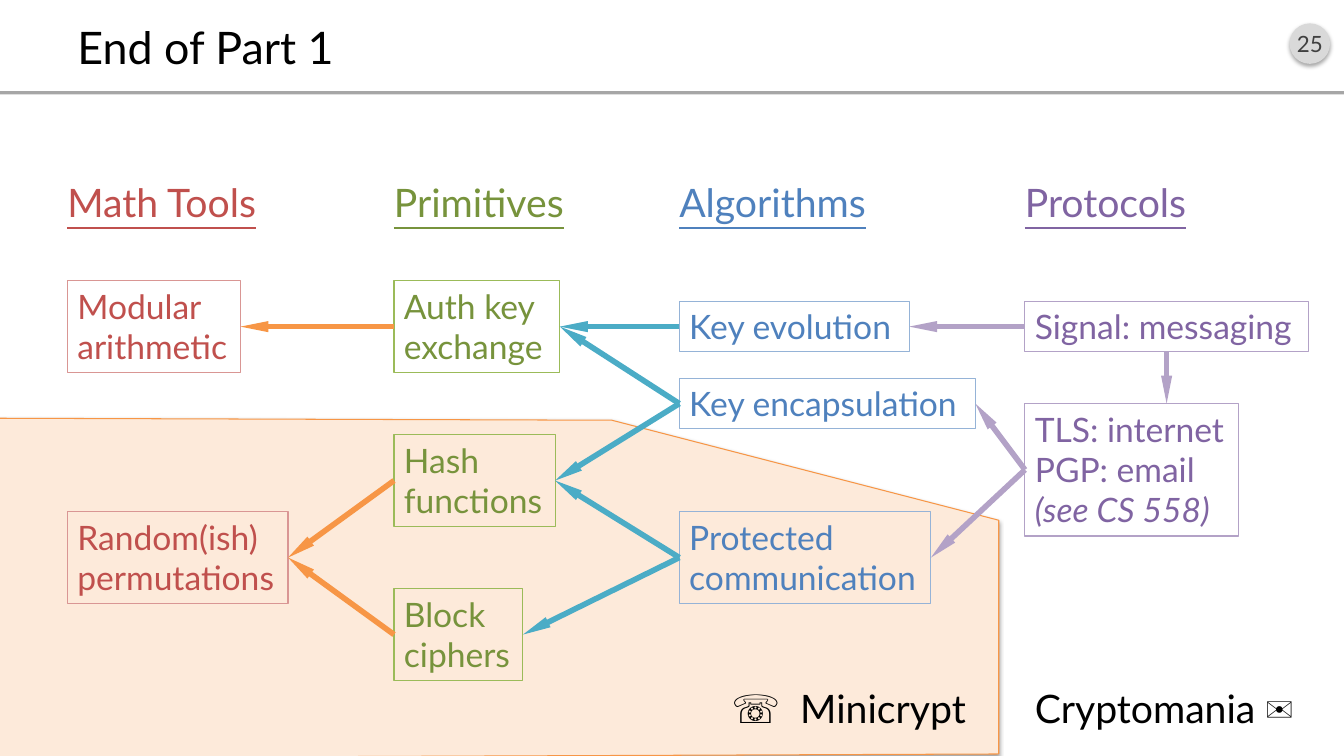
"""Build the closing slide of part 1: a map from protocols down to math tools."""
import pptx
import pptx.dml.color
import pptx.enum.shapes
import pptx.enum.text
import pptx.oxml
import pptx.util

Cm = pptx.util.Cm
Pt = pptx.util.Pt
RGB = pptx.dml.color.RGBColor.from_string
SHAPE = pptx.enum.shapes.MSO_SHAPE
ALIGN = pptx.enum.text.PP_ALIGN
MIDDLE = pptx.enum.text.MSO_ANCHOR.MIDDLE
FIT = pptx.enum.text.MSO_AUTO_SIZE.SHAPE_TO_FIT_TEXT
NAMESPACE = 'xmlns:a="http://schemas.openxmlformats.org/drawingml/2006/main"'
SHADOW = (
    f'<a:effectLst {NAMESPACE}><a:outerShdw blurRad="39370" dist="22860" dir="5400000" '
    'rotWithShape="0"><a:srgbClr val="000000"><a:alpha val="35000"/></a:srgbClr>'
    '</a:outerShdw></a:effectLst>'
)
COLOURS = {
    "black": "000000", "number": "404040", "badge": "D9D9D9", "rule": "A6A6A6",
    "red": "C0504D", "green": "77933C", "blue": "4F81BD", "purple": "8064A2",
    "red edge": "D99694", "green edge": "9BBB59", "blue edge": "95B3D7",
    "purple edge": "B3A2C7", "orange": "F79646", "teal": "4BACC6", "peach": "FDEADA",
}


def write(box, text, size, colour, align=ALIGN.LEFT):
    """Fill a box with unwrapped text in one style."""
    box.text_frame.word_wrap = False
    box.text_frame.text = text
    for para in box.text_frame.paragraphs:
        para.alignment = align
        for span in para.runs:
            span.font.name = "Lato"
            span.font.size = Pt(size)
            span.font.color.rgb = RGB(COLOURS[colour])


def add_effects(shape, xml):
    """Replace the effects of a shape."""
    shape._element.spPr.remove_all("a:effectLst")
    shape._element.spPr.append(pptx.oxml.parse_xml(xml))


deck = pptx.Presentation()
deck.slide_width, deck.slide_height = Cm(33.87), Cm(19.05)
page = deck.slides.add_slide(deck.slide_layouts[6])
shapes = page.shapes

badge = shapes.add_shape(SHAPE.OVAL, Cm(32.5), Cm(0.59), Cm(1.02), Cm(1.02))
badge.fill.solid()
badge.fill.fore_color.rgb = RGB(COLOURS["badge"])
badge.line.fill.background()
add_effects(badge, SHADOW)
badge.text_frame.margin_left = badge.text_frame.margin_right = 0
write(badge, "25", 16, "number", ALIGN.CENTER)

rule = shapes.add_shape(SHAPE.RECTANGLE, 0, Cm(2.3), deck.slide_width, Cm(0.08))
rule.fill.solid()
rule.fill.fore_color.rgb = RGB(COLOURS["rule"])
rule.line.fill.background()
rule.shadow.inherit = False

title = shapes.add_textbox(Cm(1.7), Cm(0.41), Cm(30.48), Cm(1.52))
write(title, "End of Part 1", 32, "black")
title.text_frame.word_wrap = True
title.text_frame.vertical_anchor = MIDDLE

outline = [(-0.05, 19.1), (-0.03, 10.54), (15.42, 10.59), (25.17, 13.11), (25.17, 19)]
corners = [(Cm(x), Cm(y)) for x, y in outline]
builder = shapes.build_freeform(*corners[0], scale=1.0)
builder.add_line_segments(corners[1:], close=True)
minicrypt = builder.convert_to_shape()
minicrypt.fill.solid()
minicrypt.fill.fore_color.rgb = RGB(COLOURS["peach"])
minicrypt.line.color.rgb = RGB(COLOURS["orange"])
minicrypt.line.width = Pt(0.75)
add_effects(minicrypt, SHADOW)

column_left = {"red": 1.7, "green": 9.93, "blue": 17.12, "purple": 25.83}
headings = [
    ("Math Tools", "red", 5.38), ("Primitives", "green", 4.83),
    ("Algorithms", "blue", 5.23), ("Protocols", "purple", 4.57),
]
for text, colour, width in headings:
    heading = shapes.add_textbox(Cm(column_left[colour]), Cm(4.37), Cm(width), Cm(1.45))
    write(heading, text, 28, colour)
    heading.text_frame.auto_size = FIT
    heading.text_frame.margin_left = 0
    heading.text_frame.paragraphs[0].runs[0].font.underline = True

worlds = [
    ("☏  Minicrypt", 17.96, 6.63, ALIGN.RIGHT),
    ("Cryptomania ✉", 25.83, 7.57, ALIGN.LEFT),
]
for text, left, width, align in worlds:
    world = shapes.add_textbox(Cm(left), Cm(17.12), Cm(width), Cm(1.45))
    write(world, text, 28, "black", align)
    world.text_frame.auto_size = FIT

first_row, row_step = 8.23, 1.94
topics = [
    ("modular", "Modular\varithmetic", "red", 0, 4.36),
    ("random", "Random(ish)\vpermutations", "red", 3, 5.56),
    ("auth", "Auth key\vexchange", "green", 0, 4.18),
    ("hash", "Hash\vfunctions", "green", 2, 4.06),
    ("block", "Block\vciphers", "green", 4, 3.25),
    ("evolution", "Key evolution", "blue", 0, 5.79),
    ("encapsulation", "Key encapsulation", "blue", 1, 7.46),
    ("protected", "Protected\vcommunication", "blue", 3, 6.34),
    ("signal", "Signal: messaging", "purple", 0, 7.14),
    ("tls", "TLS: internet\vPGP: email\n(see CS 558)", "purple", 1.86, 5.38),
]
boxes = {}
for name, text, colour, row, width in topics:
    line_count = 1 + text.count("\v") + text.count("\n")
    height = 0.25 + 1.03 * line_count
    top = first_row + row_step * row - height / 2
    box = shapes.add_textbox(Cm(column_left[colour]), Cm(top), Cm(width), Cm(height))
    write(box, text, 24, colour)
    box.text_frame.auto_size = FIT
    box.line.color.rgb = RGB(COLOURS[colour + " edge"])
    box.line.width = Pt(0.75)
    boxes[name] = box
boxes["tls"].text_frame.paragraphs[1].runs[0].font.italic = True

TOP, LEFT, BOTTOM, RIGHT = range(4)
arrows = [
    ("auth", "modular", "orange"), ("hash", "random", "orange"),
    ("block", "random", "orange"), ("evolution", "auth", "teal"),
    ("encapsulation", "auth", "teal"), ("encapsulation", "hash", "teal"),
    ("protected", "hash", "teal"), ("protected", "block", "teal"),
    ("signal", "evolution", "purple edge"), ("tls", "encapsulation", "purple edge"),
    ("tls", "protected", "purple edge"), ("signal", "tls", "purple edge"),
]
for source, target, colour in arrows:
    arrow = shapes.add_connector(pptx.enum.shapes.MSO_CONNECTOR.STRAIGHT, 0, 0, 0, 0)
    if target == "tls":
        start, end = boxes[source], boxes[target]
        middle = start.left + start.width // 2
        arrow.begin_x = arrow.end_x = middle
        arrow.begin_y, arrow.end_y = start.top + start.height, end.top
    else:
        arrow.begin_connect(boxes[source], LEFT)
        arrow.end_connect(boxes[target], RIGHT)
    arrow.line.color.rgb = RGB(COLOURS[colour])
    arrow.line.width = Pt(4)
    head = f'<a:tailEnd {NAMESPACE} type="triangle" w="sm" len="lg"/>'
    arrow.line._get_or_add_ln().append(pptx.oxml.parse_xml(head))
    add_effects(arrow, f"<a:effectLst {NAMESPACE}/>")

deck.save("out.pptx")
